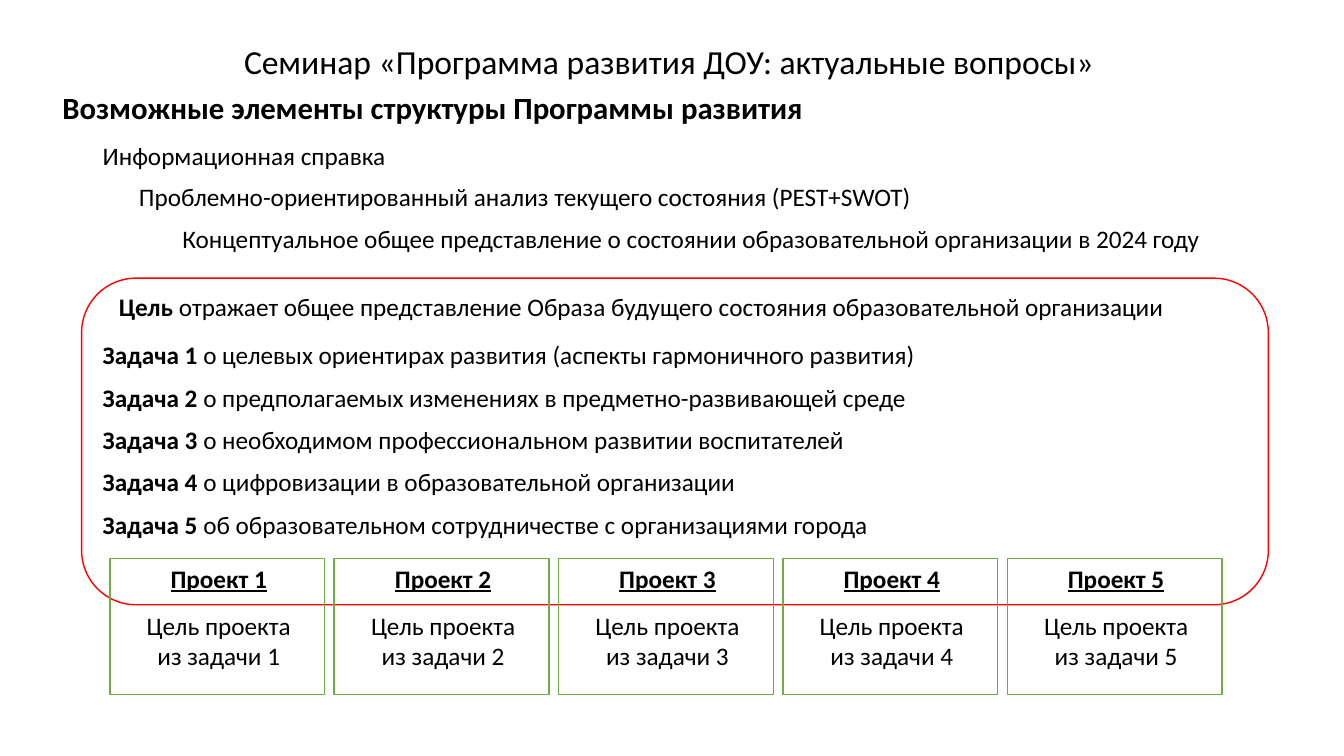
from pptx import Presentation
from pptx.dml.color import RGBColor
from pptx.enum.shapes import MSO_SHAPE
from pptx.enum.text import MSO_ANCHOR, PP_ALIGN
from pptx.util import Inches, Pt

RECTANGLE = MSO_SHAPE.RECTANGLE
ROUNDED = MSO_SHAPE.ROUNDED_RECTANGLE
TOP, MIDDLE = MSO_ANCHOR.TOP, MSO_ANCHOR.MIDDLE
LEFT, CENTER, JUSTIFY = PP_ALIGN.LEFT, PP_ALIGN.CENTER, PP_ALIGN.JUSTIFY

BLACK = RGBColor(0x00, 0x00, 0x00)
WHITE = RGBColor(0xFF, 0xFF, 0xFF)
RED = RGBColor(0xFF, 0x00, 0x00)
GREEN = RGBColor(0x70, 0xAD, 0x47)
FONT = "Calibri"

SECTIONS = [
    (0.92, 1.34, 3.23, "Информационная справка"),
    (1.28, 1.75, 10.67,
     "Проблемно-ориентированный анализ текущего состояния (PEST+SWOT)"),
    (1.71, 2.17, 10.67,
     "Концептуальное общее представление о состоянии "
     "образовательной организации в 2024 году"),
]
GOAL = " отражает общее представление Образа будущего состояния образовательной организации"
TASKS = [
    "о целевых ориентирах развития (аспекты гармоничного развития)",
    "о предполагаемых изменениях в предметно-развивающей среде",
    "о необходимом профессиональном развитии воспитателей",
    "о цифровизации в образовательной организации",
    "об образовательном сотрудничестве с организациями города",
]
TASK_TOP, TASK_STEP = 3.32, 0.42
PROJECT_LEFT, PROJECT_TOP, PROJECT_STEP = 1.09, 5.54, 2.225


def add_run(paragraph, text, size=18, bold=False, underline=False):
    run = paragraph.add_run()
    run.text = text
    run.font.name = FONT
    run.font.size = Pt(size)
    run.font.color.rgb = BLACK
    run.font.bold = bold
    run.font.underline = underline


def add_text(slide, left, top, width, height=0.4, align=LEFT, anchor=TOP):
    """Add an empty wrapping text box and return its text frame."""
    box = slide.shapes.add_textbox(
        Inches(left), Inches(top), Inches(width), Inches(height))
    frame = box.text_frame
    frame.word_wrap = True
    frame.vertical_anchor = anchor
    frame.paragraphs[0].alignment = align
    return frame


def add_frame(slide, kind, left, top, width, height, line, fill=None):
    outline = slide.shapes.add_shape(
        kind, Inches(left), Inches(top), Inches(width), Inches(height))
    outline.shadow.inherit = False
    if fill is None:
        outline.fill.background()
    else:
        outline.fill.solid()
        outline.fill.fore_color.rgb = fill
    outline.line.color.rgb = line
    outline.line.width = Pt(1)


def add_statement(slide, left, top, width, label, statement):
    paragraph = add_text(slide, left, top, width).paragraphs[0]
    add_run(paragraph, label, bold=True)
    add_run(paragraph, statement)


def add_project(slide, number, left):
    add_frame(slide, RECTANGLE, left, PROJECT_TOP, 2.13, 1.35, GREEN)
    card = add_text(slide, left + 0.14, PROJECT_TOP, 1.88, 1.3, CENTER)
    add_run(card.paragraphs[0], f"Проект {number}", bold=True, underline=True)
    project_goal = card.add_paragraph()
    project_goal.alignment = CENTER
    project_goal.space_before = Pt(12)
    add_run(project_goal, f"Цель проекта из задачи {number}")


def main():
    prs = Presentation()
    prs.slide_width, prs.slide_height = Inches(13.33), Inches(7.5)
    slide = prs.slides.add_slide(prs.slide_layouts[6])

    # Title and heading
    title = add_text(slide, 0.53, 0.4, 12.21, 0.47, CENTER, MIDDLE).paragraphs[0]
    title.line_spacing = 0.9
    add_run(title, "Семинар «Программа развития ДОУ: актуальные вопросы»", 24)
    heading = add_text(slide, 0.52, 0.83, 12.53, 0.47, JUSTIFY).paragraphs[0]
    add_run(heading, "Возможные элементы структуры Программы развития", 22, True)

    # Opening sections of the programme
    for left, top, width, section in SECTIONS:
        add_run(add_text(slide, left, top, width).paragraphs[0], section)

    # Goal and tasks
    add_frame(slide, ROUNDED, 0.81, 2.76, 11.77, 3.24, RED, WHITE)
    add_statement(slide, 1.08, 2.84, 11.11, "Цель", GOAL)
    for i, task in enumerate(TASKS):
        add_statement(slide, 0.92, TASK_TOP + i * TASK_STEP, 11.65,
                      f"Задача {i + 1}", f" {task}")

    # One project for each task
    for i in range(len(TASKS)):
        add_project(slide, i + 1, PROJECT_LEFT + i * PROJECT_STEP)

    prs.save("out.pptx")


if __name__ == "__main__":
    main()
